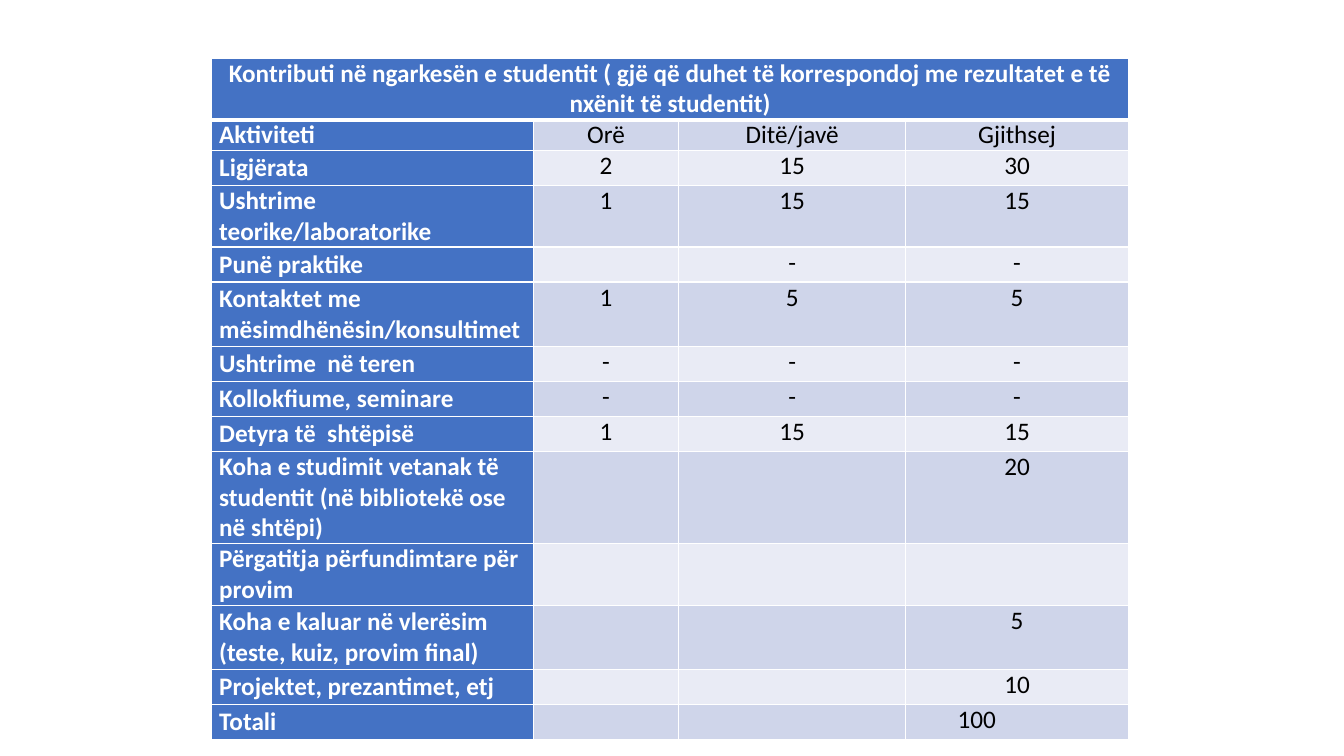
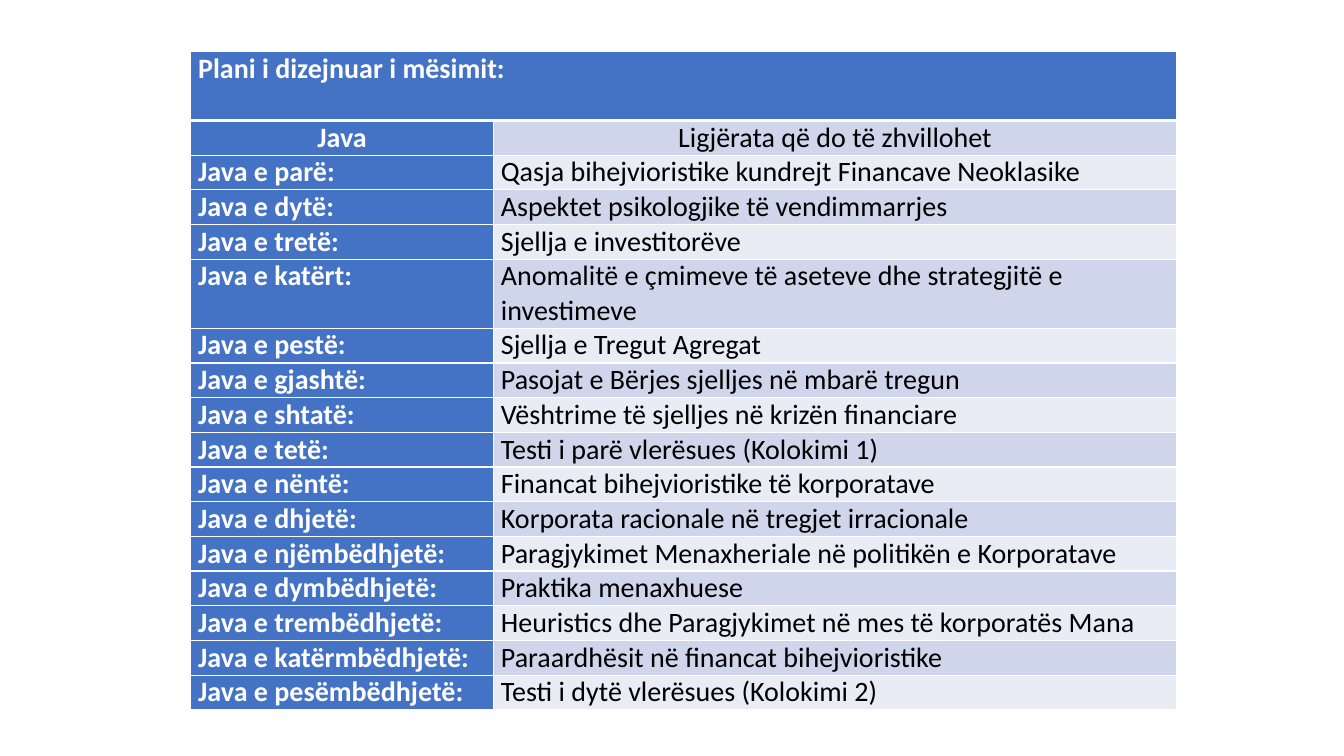
from lxml.etree import SubElement
from pptx import Presentation
from pptx.dml.color import RGBColor
from pptx.enum.text import MSO_ANCHOR, PP_ALIGN
from pptx.oxml import parse_xml
from pptx.oxml.ns import nsdecls, qn
from pptx.util import Pt

COLORS = {"head": "4472C4", "odd": "CFD5EA", "even": "E9EBF5",
          "light": "FFFFFF", "dark": "000000"}

WORKLOAD_TITLE = ("Kontributi nё ngarkesën e studentit ( gjë që duhet tё korrespondoj "
                  "me rezultatet e tё nxënit tё studentit)")
WORKLOAD = [
    (22, "Aktiviteti", "Orë", "Ditë/javë", "Gjithsej"),
    (25, "Ligjërata", "2", "15", "30"),
    (44, "Ushtrime teorike/laboratorike", "1", "15", "15"),
    (25, "Punë praktike", "", "-", "-"),
    (46, "Kontaktet me mësimdhënësin/konsultimet", "1", "5", "5"),
    (25, "Ushtrime  në teren", "-", "-", "-"),
    (25, "Kollokfiume, seminare", "-", "-", "-"),
    (25, "Detyra të  shtëpisë", "1", "15", "15"),
    (66, "Koha e studimit vetanak të studentit (në bibliotekë ose në shtëpi)", "", "", "20"),
    (44, "Përgatitja përfundimtare për provim", "", "", ""),
    (46, "Koha e kaluar në vlerësim (teste, kuiz, provim final)", "", "", "5"),
    (25, "Projektet, prezantimet, etj", "", "", "10"),
    (25, "Totali", "", "", "\t100"),
]
LECTURES = [
    ("parë", "Qasja bihejvioristike kundrejt Financave Neoklasike"),
    ("dytë", "Aspektet psikologjike të vendimmarrjes"),
    ("tretë", "Sjellja e investitorëve"),
    ("katërt", "Anomalitë e çmimeve të aseteve dhe strategjitë e investimeve"),
    ("pestë", "Sjellja e Tregut Agregat"),
    ("gjashtë", "Pasojat e Bërjes sjelljes në mbarë tregun"),
    ("shtatë", "Vështrime të sjelljes në krizën financiare"),
    ("tetë", "Testi i parë vlerësues (Kolokimi 1)"),
    ("nëntë", "Financat bihejvioristike të korporatave"),
    ("dhjetë", "Korporata racionale në tregjet irracionale"),
    ("njëmbëdhjetë", "Paragjykimet Menaxheriale në politikën e Korporatave"),
    ("dymbëdhjetë", "Praktika menaxhuese"),
    ("trembëdhjetë", "Heuristics dhe Paragjykimet në mes të korporatës Mana"),
    ("katërmbëdhjetë", "Paraardhësit në financat bihejvioristike"),
    ("pesëmbëdhjetë", "Testi i dytë vlerësues (Kolokimi 2)"),
]


class Deck:
    """Holds the presentation, its style and the current slide."""

    font = "Calibri"
    side_margin = Pt(5.4)
    total_tab = Pt(45.5)

    def __init__(self):
        self.prs = Presentation()
        self.prs.slide_width, self.prs.slide_height = Pt(960), Pt(540)

    def slide(self):
        self.s = self.prs.slides.add_slide(self.prs.slide_layouts[6])

    def table(self, left, top, widths, heights, rows, size, align, anchor):
        shape = self.s.shapes.add_table(len(rows), len(widths), Pt(left), Pt(top),
                                        Pt(sum(widths)), Pt(sum(heights)))
        table = shape.table
        table.first_row = table.horz_banding = False
        for column, width in zip(table.columns, widths):
            column.width = Pt(width)
        for row, height in zip(table.rows, heights):
            row.height = Pt(height)
        for i, texts in enumerate(rows):
            for j, text in enumerate(texts):
                head = i == 0 or j == 0
                cell = table.cell(i, j)
                fill = "head" if head else "odd" if i % 2 else "even"
                self.paint(cell, fill, 3 if i == 1 else 1, 3 if i == 0 else 1)
                cell.vertical_anchor = anchor if i and (j == 0 or i == 1) else MSO_ANCHOR.TOP
                if text:
                    self.cell_text(cell, text, size, head, align(i, j))
        table.cell(0, 0).merge(table.cell(0, len(widths) - 1))

    def paint(self, cell, fill, top, bottom):
        cell.margin_left = cell.margin_right = self.side_margin
        cell.margin_top = cell.margin_bottom = 0
        cell.fill.solid()
        cell.fill.fore_color.rgb = RGBColor.from_string(COLORS[fill])
        props = cell._tc.get_or_add_tcPr()
        edges = [("L", 1), ("R", 1), ("T", top), ("B", bottom)]
        for k, (side, width) in enumerate(edges):
            props.insert(k, parse_xml(
                f'<a:ln{side} {nsdecls("a")} w="{Pt(width)}"><a:solidFill>'
                f'<a:srgbClr val="{COLORS["light"]}"/></a:solidFill></a:ln{side}>'))

    def cell_text(self, cell, text, size, head, align):
        p = cell.text_frame.paragraphs[0]
        p.alignment = align
        if text.startswith("\t"):
            p.alignment = PP_ALIGN.LEFT
            tabs = SubElement(p._p.get_or_add_pPr(), qn("a:tabLst"))
            SubElement(tabs, qn("a:tab"), pos=str(self.total_tab), algn="ctr")
        r = p.add_run()
        r.text = text
        r.font.name, r.font.size, r.font.bold = self.font, Pt(size), head
        r.font.color.rgb = RGBColor.from_string(COLORS["light" if head else "dark"])


def main():
    deck = Deck()
    deck.slide()
    deck.table(
        151.2, 41.5, [229.7, 104, 162, 159.2], [44] + [row[0] for row in WORKLOAD],
        [(WORKLOAD_TITLE, "", "", "")] + [row[1:] for row in WORKLOAD], 18,
        lambda i, j: PP_ALIGN.LEFT if i and j == 0 else PP_ALIGN.CENTER, MSO_ANCHOR.MIDDLE)

    deck.slide()
    rows = [("Plani i dizejnuar i mësimit:", ""), ("Java", "Ligjërata që do të zhvillohet")]
    rows += [(f"Java e {week}:", topic) for week, topic in LECTURES]
    heights = [49.3 if i in (0, 5) else 24.8 for i in range(len(rows))]
    deck.table(136.2, 36.8, [216.2, 488.2], heights, rows, 20,
               lambda i, j: PP_ALIGN.CENTER if i == 1 else PP_ALIGN.LEFT, MSO_ANCHOR.TOP)
    deck.prs.save("out.pptx")


if __name__ == "__main__":
    main()
